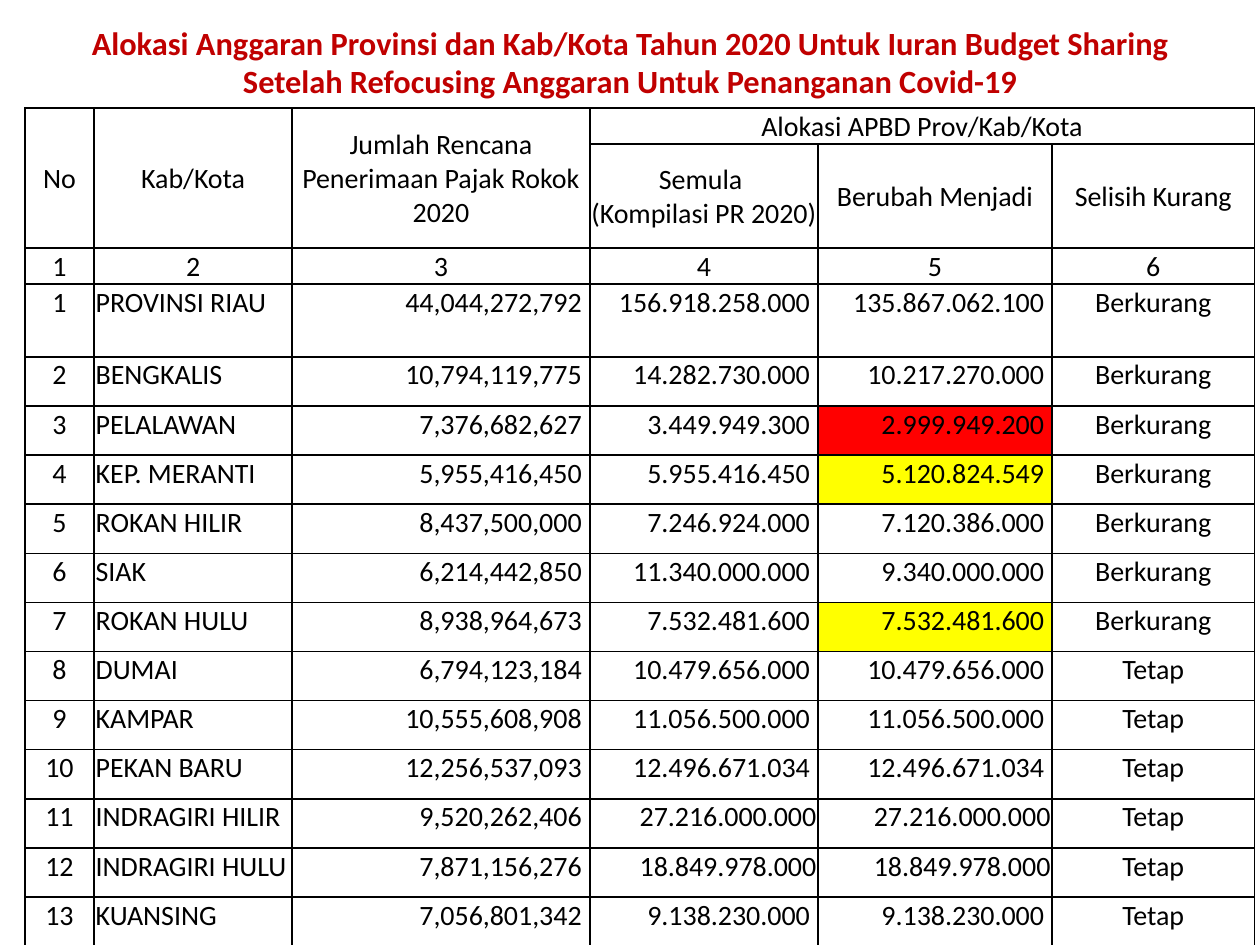
from lxml import etree
from pptx import Presentation
from pptx import util as u
from pptx.dml import color
from pptx.enum import text
from pptx.oxml import ns

CENTER, LEFT, RIGHT = text.PP_ALIGN.CENTER, text.PP_ALIGN.LEFT, text.PP_ALIGN.RIGHT
TOP, MIDDLE = text.MSO_ANCHOR.TOP, text.MSO_ANCHOR.MIDDLE
EDGE, PADDED = 0.03, 0.16  # cell margins in cm

TITLE = ["Alokasi Anggaran Provinsi dan Kab/Kota Tahun 2020 Untuk Iuran Budget Sharing",
         "Setelah Refocusing Anggaran Untuk Penanganan Covid-19"]
HEADER = [
    ["No", "Kab/Kota", "Jumlah Rencana Penerimaan Pajak Rokok 2020",
     "Alokasi APBD Prov/Kab/Kota", "", ""],
    ["", "", "", "Semula \n(Kompilasi PR 2020)", "Berubah Menjadi", "Selisih Kurang"],
    ["1", "2", "3", "4", "5", "6"],
]
REGIONS = [
    ["PROVINSI RIAU", "44,044,272,792", "156.918.258.000", "135.867.062.100", "Berkurang"],
    ["BENGKALIS", "10,794,119,775", "14.282.730.000", "10.217.270.000", "Berkurang"],
    ["PELALAWAN", "7,376,682,627", "3.449.949.300", "2.999.949.200", "Berkurang"],
    ["KEP. MERANTI", "5,955,416,450", "5.955.416.450", "5.120.824.549", "Berkurang"],
    ["ROKAN HILIR", "8,437,500,000", "7.246.924.000", "7.120.386.000", "Berkurang"],
    ["SIAK", "6,214,442,850", "11.340.000.000", "9.340.000.000", "Berkurang"],
    ["ROKAN HULU", "8,938,964,673", "7.532.481.600", "7.532.481.600", "Berkurang"],
    ["DUMAI", "6,794,123,184", "10.479.656.000", "10.479.656.000", "Tetap"],
    ["KAMPAR", "10,555,608,908", "11.056.500.000", "11.056.500.000", "Tetap"],
    ["PEKAN BARU", "12,256,537,093", "12.496.671.034", "12.496.671.034", "Tetap"],
    ["INDRAGIRI HILIR", "9,520,262,406", "27.216.000.000", "27.216.000.000", "Tetap"],
    ["INDRAGIRI HULU", "7,871,156,276", "18.849.978.000", "18.849.978.000", "Tetap"],
    ["KUANSING", "7,056,801,342", "9.138.230.000", "9.138.230.000", "Tetap"],
]
ALIGNMENTS = [CENTER, LEFT, RIGHT, RIGHT, RIGHT, CENTER]
COLUMN_WIDTHS = [1.4, 3.99, 6, 4.6, 4.72, 4.08]
ROW_HEIGHTS = [0.5, 1.45, 0.56, 1.47] + [0.99] * 12
MERGES = [(0, 0, 1, 0), (0, 1, 1, 1), (0, 2, 1, 2), (0, 3, 0, 5)]
HIGHLIGHTS = {("PELALAWAN", 4): "FF0000", ("KEP. MERANTI", 4): "FFFF00",
              ("ROKAN HULU", 4): "FFFF00"}
FLUSH_AMOUNTS = {"INDRAGIRI HILIR", "INDRAGIRI HULU"}


def rgb(value):
    return color.RGBColor.from_string(value)


def apply(target, values):
    for name, value in values.items():
        setattr(target, name, value)


class SlideBuilder:
    title_font = {"name": "Calibri", "size": u.Pt(18.5), "bold": True}
    table_font = {"name": "Calibri", "size": u.Pt(16), "bold": False}
    title_color, ink = "C00000", "000000"

    def __init__(self, presentation):
        self.slide = presentation.slides.add_slide(presentation.slide_layouts[5])

    def fill_text(self, frame, lines, font, font_color, alignment):
        frame.text = "\n".join(lines)
        for paragraph in frame.paragraphs:
            apply(paragraph, {"alignment": alignment, "line_spacing": 1.0})
            for run in paragraph.runs:
                apply(run.font, font)
                run.font.color.rgb = rgb(font_color)

    def title(self, lines, left, top, width, height):
        shape = self.slide.shapes.title
        apply(shape, {"left": u.Cm(left), "top": u.Cm(top),
                      "width": u.Cm(width), "height": u.Cm(height)})
        apply(shape.text_frame, {"word_wrap": True, "vertical_anchor": TOP,
                                 "auto_size": text.MSO_AUTO_SIZE.NONE})
        self.fill_text(shape.text_frame, lines, self.title_font, self.title_color, CENTER)

    def table(self, left, top, widths, heights, merges):
        table = self.slide.shapes.add_table(
            len(heights), len(widths), u.Cm(left), u.Cm(top),
            u.Cm(sum(widths)), u.Cm(sum(heights))).table
        apply(table, {"first_row": False, "horz_banding": False})
        for column, width in zip(table.columns, widths):
            column.width = u.Cm(width)
        for row, height in zip(table.rows, heights):
            row.height = u.Cm(height)
        for first_row, first_column, last_row, last_column in merges:
            table.cell(first_row, first_column).merge(table.cell(last_row, last_column))
        return table

    def cell(self, cell, content, alignment, anchor, right=EDGE, fill=None):
        apply(cell, {"vertical_anchor": anchor, "margin_left": u.Cm(EDGE),
                     "margin_right": u.Cm(right), "margin_top": u.Cm(EDGE),
                     "margin_bottom": 0})
        self.fill_text(cell.text_frame, content.split("\n"), self.table_font, self.ink,
                       alignment)
        self.borders(cell)
        if fill:
            cell.fill.solid()
            cell.fill.fore_color.rgb = rgb(fill)
        else:
            cell.fill.background()

    def borders(self, cell):
        properties = cell._tc.get_or_add_tcPr()
        for side in ("lnL", "lnR", "lnT", "lnB"):
            line = etree.SubElement(properties, ns.qn(f"a:{side}"), w=str(u.Pt(1)))
            fill = etree.SubElement(line, ns.qn("a:solidFill"))
            etree.SubElement(fill, ns.qn("a:srgbClr"), val=self.ink)


def main():
    presentation = Presentation()
    apply(presentation, {"slide_width": u.Cm(25.4), "slide_height": u.Cm(19.05)})
    builder = SlideBuilder(presentation)

    # Title
    builder.title(TITLE, 0.3, 0.33, 24.8, 1.8)

    # Table header
    table = builder.table(0.5, 2.18, COLUMN_WIDTHS, ROW_HEIGHTS, MERGES)
    for row, labels in enumerate(HEADER):
        for column, label in enumerate(labels):
            if not table.cell(row, column).is_spanned:
                builder.cell(table.cell(row, column), label, CENTER, MIDDLE)
            else:
                builder.borders(table.cell(row, column))

    # One row per region
    for number, region in enumerate(REGIONS, start=1):
        name = region[0]
        for column, content in enumerate([str(number)] + region):
            flush = name in FLUSH_AMOUNTS and column in (3, 4)
            padded = ALIGNMENTS[column] == RIGHT and not flush
            builder.cell(table.cell(len(HEADER) + number - 1, column), content,
                         ALIGNMENTS[column], TOP, PADDED if padded else EDGE,
                         HIGHLIGHTS.get((name, column)))

    presentation.save("out.pptx")


if __name__ == "__main__":
    main()
